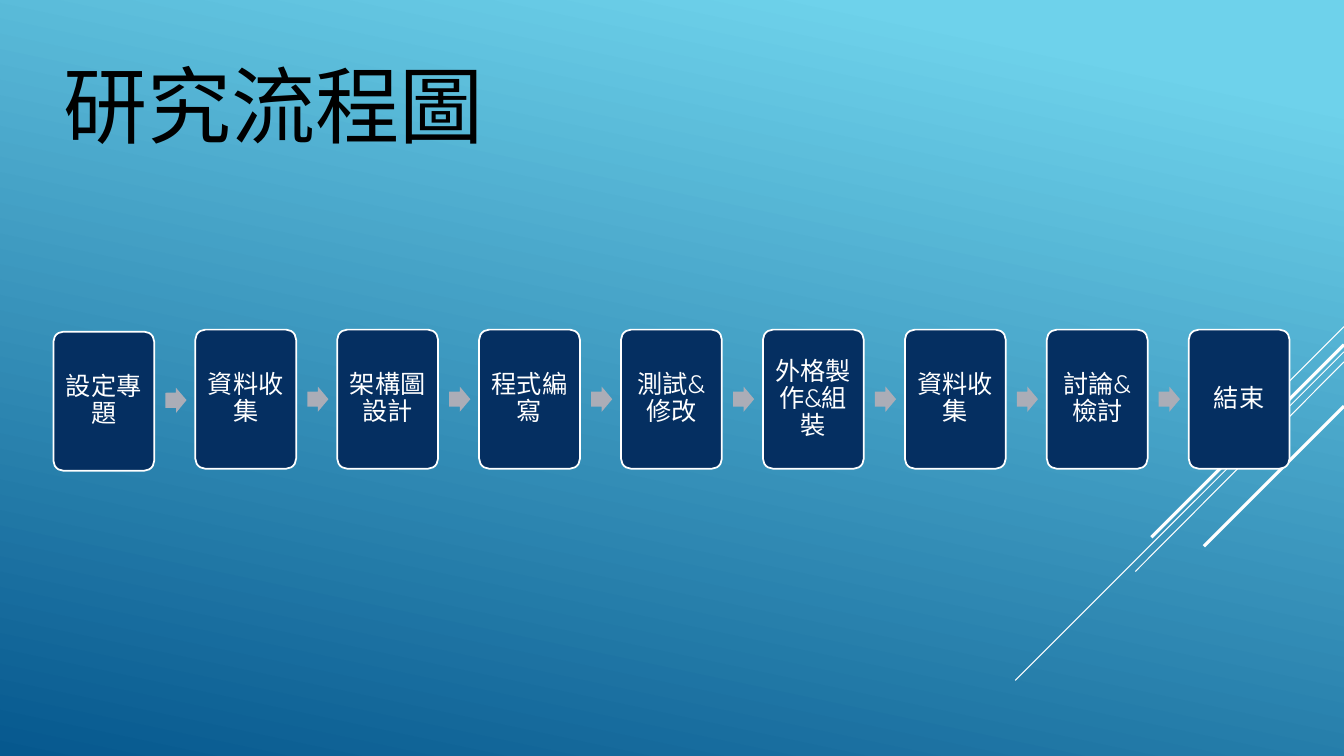
from dataclasses import dataclass

import lxml.etree
import pptx
import pptx.dml.color
import pptx.enum.shapes
import pptx.enum.text
import pptx.oxml.ns
import pptx.util
from pptx.util import Inches

FONT = "Quicksand"
WHITE = "FFFFFF"
NAVY = "052F61"
GREY = "ABADB7"

FIRST_LEFT, LAST_LEFT = 0.53, 11.79
BOX_TOP, BOX_WIDTH, BOX_HEIGHT = 3.27, 1.0, 1.38
ARROW_OFFSET, ARROW_WIDTH, ARROW_HEIGHT = 1.11, 0.21, 0.25


@dataclass
class Step:
    label: str
    drop: float = 0.0
    arrow_drop: float = 0.0
    arrow_rotation: float = 0.0


@dataclass
class Ray:
    start_y: float
    end_x: float
    end_y: float
    width: float = 0.75


STEPS = [
    Step("設定專題", drop=0.02, arrow_drop=0.01, arrow_rotation=359.3),
    Step("資料收集"),
    Step("架構圖設計"),
    Step("程式編寫"),
    Step("測試&修改"),
    Step("外格製作&組裝"),
    Step("資料收集"),
    Step("討論&檢討"),
    Step("結束"),
]

RAYS = [
    Ray(3.24, 12.33, 4.24),
    Ray(3.49, 10.07, 6.75),
    Ray(3.59, 11.26, 5.67),
    Ray(3.42, 11.42, 5.33, width=2.25),
    Ray(4.03, 11.94, 5.42, width=2.25),
]


def rgb(value: str) -> pptx.dml.color.RGBColor:
    return pptx.dml.color.RGBColor.from_string(value)


def write_text(frame, text: str, *, size: float, color: str, align, anchor,
               wrap: bool = True, spacing: float = 1.0) -> None:
    frame.word_wrap = wrap
    frame.vertical_anchor = anchor
    para = frame.paragraphs[0]
    para.alignment = align
    para.line_spacing = spacing
    span = para.add_run()
    span.text = text
    span.font.name = FONT
    span.font.size = pptx.util.Pt(size)
    span.font.color.rgb = rgb(color)


def paint_background(slide) -> None:
    fill = slide.background.fill
    fill.gradient()
    fill.gradient_angle = 360 - 102
    stops = [(0.1, "6ED2EB"), (1.0, "06588E")]
    for stop, (position, color) in zip(fill.gradient_stops, stops):
        stop.position = position
        stop.color.rgb = rgb(color)


def add_ray(slide, ray: Ray) -> None:
    """Draw a diagonal line inward from the right edge of the slide."""
    line = slide.shapes.add_connector(
        pptx.enum.shapes.MSO_CONNECTOR.STRAIGHT,
        Inches(13.33), Inches(ray.start_y), Inches(ray.end_x), Inches(ray.end_y))
    line.line.color.rgb = rgb(WHITE)
    line.line.width = pptx.util.Pt(ray.width)
    lxml.etree.SubElement(line._element.spPr, pptx.oxml.ns.qn("a:effectLst"))


def add_filled(slide, kind, left: float, top: float, width: float, height: float,
               color: str, adjustments: list[float]):
    """Add a flat preset shape without an outline."""
    shape = slide.shapes.add_shape(
        kind, Inches(left), Inches(top), Inches(width), Inches(height))
    shape.shadow.inherit = False
    shape.fill.solid()
    shape.fill.fore_color.rgb = rgb(color)
    shape.line.fill.background()
    for index, value in enumerate(adjustments):
        shape.adjustments[index] = value
    return shape


def add_step(slide, step: Step, left: float) -> None:
    box = add_filled(slide, pptx.enum.shapes.MSO_SHAPE.ROUNDED_RECTANGLE,
                     left, BOX_TOP + step.drop, BOX_WIDTH, BOX_HEIGHT, NAVY, [0.1])
    box.line.color.rgb = rgb(WHITE)
    box.line.width = pptx.util.Pt(1.25)
    frame = box.text_frame
    frame.margin_left = frame.margin_right = Inches(0.07)
    frame.margin_top = frame.margin_bottom = Inches(0.07)
    write_text(frame, step.label, size=18, color=WHITE, spacing=0.9,
               align=pptx.enum.text.PP_ALIGN.CENTER,
               anchor=pptx.enum.text.MSO_ANCHOR.MIDDLE)


def add_arrow(slide, step: Step, box_left: float) -> None:
    top = BOX_TOP + (BOX_HEIGHT - ARROW_HEIGHT) / 2 + step.arrow_drop
    arrow = add_filled(slide, pptx.enum.shapes.MSO_SHAPE.RIGHT_ARROW,
                       box_left + ARROW_OFFSET, top, ARROW_WIDTH, ARROW_HEIGHT,
                       GREY, [0.6, 0.5])
    arrow.rotation = step.arrow_rotation


def add_title(slide, text: str) -> None:
    title = slide.shapes.title
    title.left, title.top = Inches(0.53), Inches(0.48)
    title.width, title.height = Inches(4.41), Inches(1.11)
    write_text(title.text_frame, text, size=60, color="000000", wrap=False,
               align=pptx.enum.text.PP_ALIGN.LEFT,
               anchor=pptx.enum.text.MSO_ANCHOR.TOP)
    title.text_frame.auto_size = pptx.enum.text.MSO_AUTO_SIZE.SHAPE_TO_FIT_TEXT


def main() -> None:
    deck = pptx.Presentation()
    deck.slide_width, deck.slide_height = Inches(13.33), Inches(7.5)
    slide = deck.slides.add_slide(deck.slide_layouts.get_by_name("Title Only"))
    paint_background(slide)
    for ray in RAYS:
        add_ray(slide, ray)
    pitch = (LAST_LEFT - FIRST_LEFT) / (len(STEPS) - 1)
    for index, step in enumerate(STEPS):
        left = FIRST_LEFT + index * pitch
        add_step(slide, step, left)
        if index < len(STEPS) - 1:
            add_arrow(slide, step, left)
    add_title(slide, "研究流程圖")
    deck.save("out.pptx")


if __name__ == "__main__":
    main()
